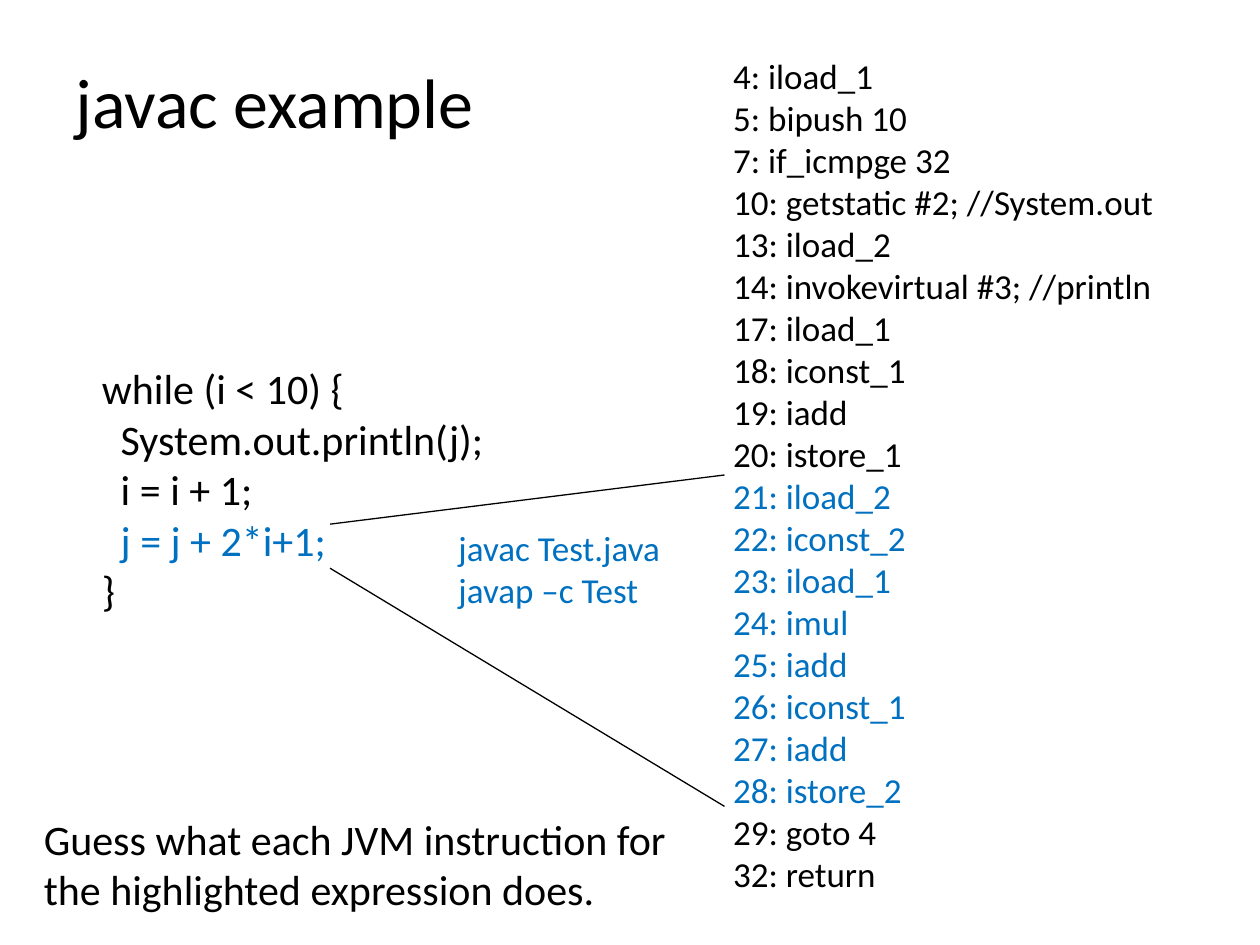
from dataclasses import dataclass

from lxml import etree
from pptx import Presentation
from pptx.dml.color import RGBColor
from pptx.enum.shapes import MSO_CONNECTOR
from pptx.enum.text import MSO_ANCHOR, MSO_AUTO_SIZE
from pptx.oxml.ns import qn
from pptx.util import Inches, Pt

STRAIGHT = MSO_CONNECTOR.STRAIGHT
MIDDLE = MSO_ANCHOR.MIDDLE
GROW = MSO_AUTO_SIZE.SHAPE_TO_FIT_TEXT
FIXED = MSO_AUTO_SIZE.NONE

COLORS = {"text": "000000", "highlight": "0070C0"}


@dataclass(frozen=True)
class Line:
    text: str
    color: str = "text"
    indent: float = 0


@dataclass(frozen=True)
class TextBlock:
    box: tuple[float, float, float, float]
    size: int
    lines: list[Line]
    wrap: bool = True
    auto_size: MSO_AUTO_SIZE = GROW


@dataclass(frozen=True)
class Callout:
    start: tuple[float, float]
    end: tuple[float, float]


BYTECODE = [
    "4: iload_1",
    "5: bipush 10",
    "7: if_icmpge 32",
    "10: getstatic #2; //System.out",
    "13: iload_2",
    "14: invokevirtual #3; //println",
    "17: iload_1",
    "18: iconst_1",
    "19: iadd",
    "20: istore_1",
    "21: iload_2",
    "22: iconst_2",
    "23: iload_1",
    "24: imul",
    "25: iadd",
    "26: iconst_1",
    "27: iadd",
    "28: istore_2",
    "29: goto 4",
    "32: return",
]
HIGHLIGHTED = range(10, 18)
LISTING_INDENT = 0.13
OUTER, INNER = 0.3, 0.45

BLOCKS = [
    TextBlock((0.5, 0.17, 4.86, 1.25), 40, [Line("javac example")], auto_size=FIXED),
    TextBlock((0.41, 2.82, 3.62, 2.12), 24, [
        Line("while (i < 10) {", indent=OUTER),
        Line("System.out.println(j);", indent=INNER),
        Line("i = i + 1;", indent=INNER),
        Line("j = j + 2*i+1;", "highlight", INNER),
        Line("}", indent=OUTER),
    ]),
    TextBlock((5.59, 0.35, 4.02, 6.83), 20, [
        Line(text, "highlight" if i in HIGHLIGHTED else "text", LISTING_INDENT)
        for i, text in enumerate(BYTECODE)
    ]),
    TextBlock((3.54, 4.13, 1.82, 0.77), 20, [
        Line("javac Test.java", "highlight"),
        Line("javap –c Test", "highlight"),
    ], wrap=False),
    TextBlock((0.25, 6.4, 5.26, 0.91), 24, [
        Line("Guess what each JVM instruction for the highlighted expression does."),
    ]),
]

CALLOUTS = [
    Callout((2.62, 4.16), (5.75, 3.77)),
    Callout((2.62, 4.51), (5.75, 6.4)),
]


def set_attributes(target: object, values: dict) -> None:
    for name, value in values.items():
        setattr(target, name, value)


def draw_text(s, block: TextBlock) -> None:
    sp = s.shapes.add_textbox(*map(Inches, block.box))
    tf = sp.text_frame
    set_attributes(tf, {
        "word_wrap": block.wrap,
        "auto_size": block.auto_size,
        "vertical_anchor": MIDDLE,
    })
    for i, line in enumerate(block.lines):
        p = tf.add_paragraph() if i else tf.paragraphs[0]
        if line.indent:
            p._p.get_or_add_pPr().set("marL", str(Inches(line.indent)))
        r = p.add_run()
        r.text = line.text
        set_attributes(r.font, {"name": "Calibri", "size": Pt(block.size)})
        r.font.color.rgb = RGBColor.from_string(COLORS[line.color])


def draw_callout(s, callout: Callout) -> None:
    sp = s.shapes.add_connector(STRAIGHT, *map(Inches, callout.start + callout.end))
    sp.line.width = Pt(0.75)
    sp.line.color.rgb = RGBColor.from_string(COLORS["text"])
    etree.SubElement(sp._element.spPr, qn("a:effectLst"))


def main() -> None:
    prs = Presentation()
    set_attributes(prs, {"slide_width": Inches(10), "slide_height": Inches(7.5)})
    s = prs.slides.add_slide(prs.slide_layouts[6])
    for block in BLOCKS:
        draw_text(s, block)
    for callout in CALLOUTS:
        draw_callout(s, callout)
    prs.save("out.pptx")


if __name__ == "__main__":
    main()
